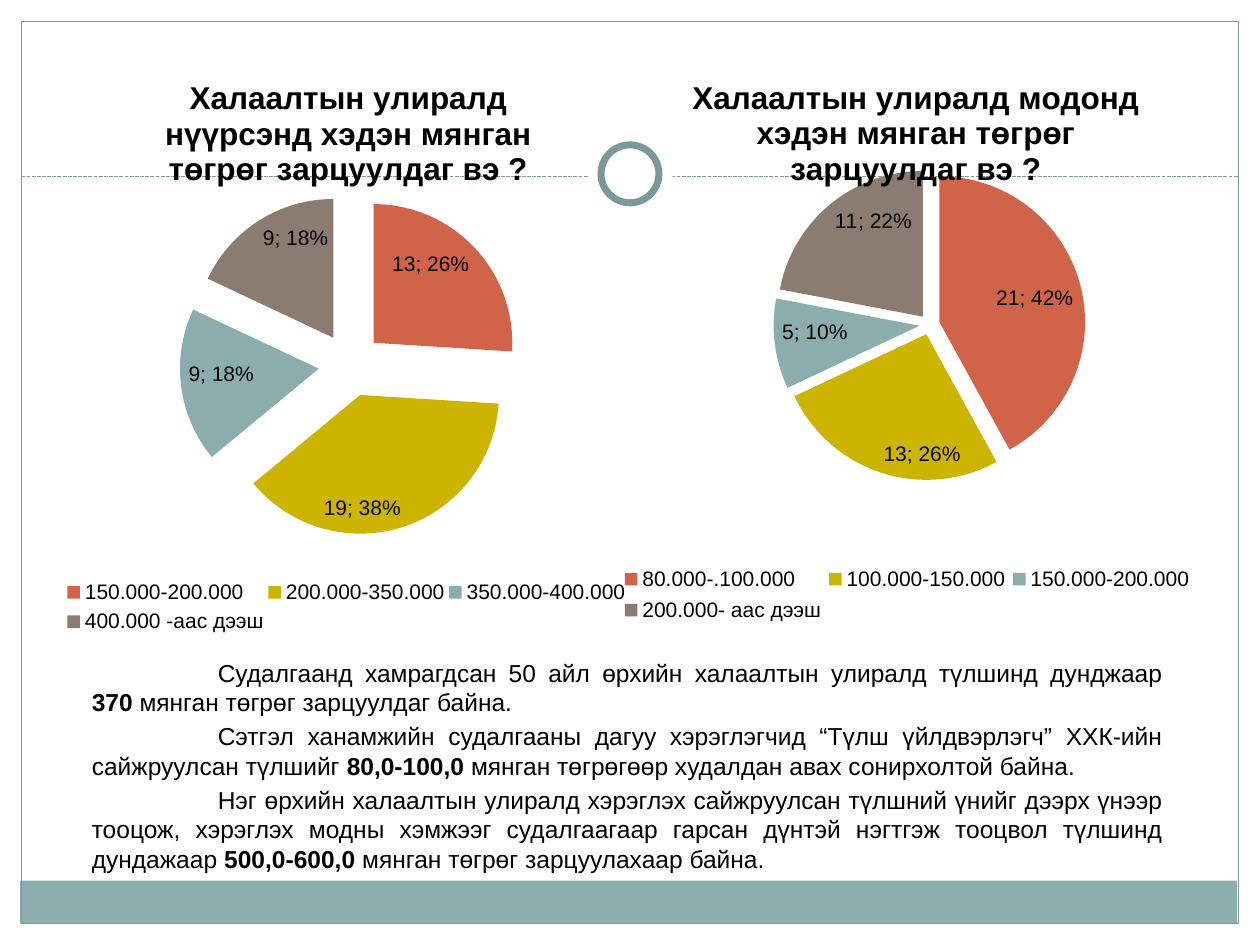
import lxml.etree
import pptx
import pptx.chart.data
import pptx.dml.color
import pptx.enum.chart
import pptx.enum.dml
import pptx.enum.shapes
import pptx.enum.text
import pptx.oxml.ns
import pptx.util

Inches = pptx.util.Inches
Pt = pptx.util.Pt
qn = pptx.oxml.ns.qn


def tint(code):
    return pptx.dml.color.RGBColor.from_string(code)


def write(par, text, size=14, bold=False, color="000000"):
    run = par.add_run()
    run.text = text
    run.font.name = "Arial"
    run.font.size = Pt(size)
    run.font.bold = bold
    run.font.color.rgb = tint(color)


deck = pptx.Presentation()
deck.slide_width, deck.slide_height = Inches(10), Inches(7.5)
slide = deck.slides.add_slide(deck.slide_layouts[6])
shapes = slide.shapes
kind = pptx.enum.shapes.MSO_SHAPE

# Dashed rule, drawn beneath the ring
rule = shapes.add_connector(
    pptx.enum.shapes.MSO_CONNECTOR.STRAIGHT,
    Inches(0.17), Inches(1.4), Inches(9.83), Inches(1.4))
rule.line.color.rgb = tint("7C999A")
rule.line.width = Pt(0.75)
rule.line.dash_style = pptx.enum.dml.MSO_LINE.SQUARE_DOT
lxml.etree.SubElement(rule._element.spPr, qn("a:effectLst"))

# Bottom band, page frame and ring: preset, box, fill, line width
for form, box, fill, width in [
    (kind.RECTANGLE, (0.16, 6.99, 9.66, 0.34), "8CADAE", 0),
    (kind.RECTANGLE, (0.17, 0.17, 9.66, 7.16), None, 0.75),
    (kind.OVAL, (4.67, 1.05, 0.67, 0.67), "FFFFFF", 0),
    (kind.OVAL, (4.77, 1.15, 0.46, 0.46), "FFFFFF", 4),
]:
    shape = shapes.add_shape(form, *map(Inches, box))
    shape.shadow.inherit = False
    if fill:
        shape.fill.solid()
        shape.fill.fore_color.rgb = tint(fill)
    else:
        shape.fill.background()
    if width:
        shape.line.color.rgb = tint("7C999A")
        shape.line.width = Pt(width)
    else:
        shape.line.fill.background()

# Pie charts; layouts are fractions of the chart box
pies = [
    dict(box=(0.5, 0.33, 4.5, 4.75), burst=23,
         title="Халаалтын улиралд нүүрсэнд хэдэн мянган төгрөг зарцуулдаг вэ ?",
         cats=["150.000-200.000", "200.000-350.000", "350.000-400.000",
               "400.000 -аас дээш"],
         vals=[13, 19, 9, 9],
         head=(0.17, 0.05), plot=(0.206, 0.25, 0.602, 0.58),
         key=(0, 0.89, 1, 0.11)),
    dict(box=(4.75, 0.33, 5, 4.67), burst=7,
         title="Халаалтын улиралд модонд хэдэн мянган төгрөг зарцуулдаг вэ ?",
         cats=["80.000-.100.000", "100.000-150.000", "150.000-200.000",
               "200.000- аас дээш"],
         vals=[21, 13, 5, 11],
         head=(0.14, 0.05), plot=(0.278, 0.194, 0.495, 0.574),
         key=(0.03, 0.88, 0.92, 0.12)),
]
for pie in pies:
    data = pptx.chart.data.CategoryChartData()
    data.categories = pie["cats"]
    data.add_series("Series 1", pie["vals"])
    chart = shapes.add_chart(
        pptx.enum.chart.XL_CHART_TYPE.PIE, *map(Inches, pie["box"]), data).chart
    chart.font.name = "Arial"
    chart.font.size = Pt(12)
    chart.font.color.rgb = tint("000000")
    write(chart.chart_title.text_frame.paragraphs[0], pie["title"],
          size=18, bold=True)
    chart.has_legend = True
    chart.legend.position = pptx.enum.chart.XL_LEGEND_POSITION.RIGHT
    chart.legend.include_in_layout = False
    chart.legend.font.size = Pt(12)

    # Slices and their labels
    plot = chart.plots[0]
    plot.vary_by_categories = True
    series = plot.series[0]
    for i, code in enumerate(["D16349", "CCB400", "8CADAE", "8C7B70"]):
        fill = series.points[i].format.fill
        fill.solid()
        fill.fore_color.rgb = tint(code)
    burst = lxml.etree.Element(qn("c:explosion"), val=str(pie["burst"]))
    series._element.find(qn("c:dPt")).addprevious(burst)
    plot.has_data_labels = True
    labels = plot.data_labels
    labels.show_value = labels.show_percentage = True
    labels.position = pptx.enum.chart.XL_LABEL_POSITION.INSIDE_END
    labels.font.size = Pt(12)
    mark = lxml.etree.Element(qn("c:separator"))
    mark.text = "; "
    labels._element.find(qn("c:showBubbleSize")).addnext(mark)

    # Fixed places for title, plot and legend
    area = chart._chartSpace.chart.plotArea
    for part, spot, place in [
        (chart.chart_title._element, 1, pie["head"]),
        (area, 0, pie["plot"]),
        (chart.legend._element, 1, pie["key"]),
    ]:
        for old in part.findall(qn("c:layout")):
            part.remove(old)
        layout = lxml.etree.Element(qn("c:layout"))
        part.insert(spot, layout)
        manual = lxml.etree.SubElement(layout, qn("c:manualLayout"))
        if part is area:
            lxml.etree.SubElement(manual, qn("c:layoutTarget"), val="inner")
        for side in "xy":
            lxml.etree.SubElement(manual, qn(f"c:{side}Mode"), val="edge")
        for side, size in zip("xywh", place):
            lxml.etree.SubElement(manual, qn(f"c:{side}"), val=str(size))

# Findings: lead, bold figure, rest
frame = shapes.add_textbox(
    Inches(0.25), Inches(5.17), Inches(9.08), Inches(1.5)).text_frame
frame.word_wrap = True
notes = [
    ("Судалгаанд хамрагдсан 50 айл өрхийн халаалтын улиралд түлшинд дунджаар ",
     "370", " мянган төгрөг зарцуулдаг байна."),
    ("Сэтгэл ханамжийн судалгааны дагуу хэрэглэгчид “Түлш үйлдвэрлэгч” ХХК-ийн "
     "сайжруулсан түлшийг ",
     "80,0-100,0", " мянган төгрөгөөр худалдан авах сонирхолтой байна."),
    ("Нэг өрхийн халаалтын улиралд хэрэглэх сайжруулсан түлшний үнийг дээрх "
     "үнээр тооцож, хэрэглэх модны хэмжээг судалгаагаар гарсан дүнтэй нэгтгэж "
     "тооцвол түлшинд дундажаар ",
     "500,0-600,0", " мянган төгрөг зарцуулахаар байна."),
]
for i, (lead, sum_, rest) in enumerate(notes):
    par = frame.add_paragraph() if i else frame.paragraphs[0]
    par.alignment = pptx.enum.text.PP_ALIGN.JUSTIFY
    par.space_before = Pt(2.8)
    props = par._p.get_or_add_pPr()
    props.set("marL", str(Inches(0.38)))
    props.set("indent", str(Inches(1)))
    write(par, lead)
    write(par, sum_, bold=True)
    write(par, rest)

deck.save("out.pptx")
